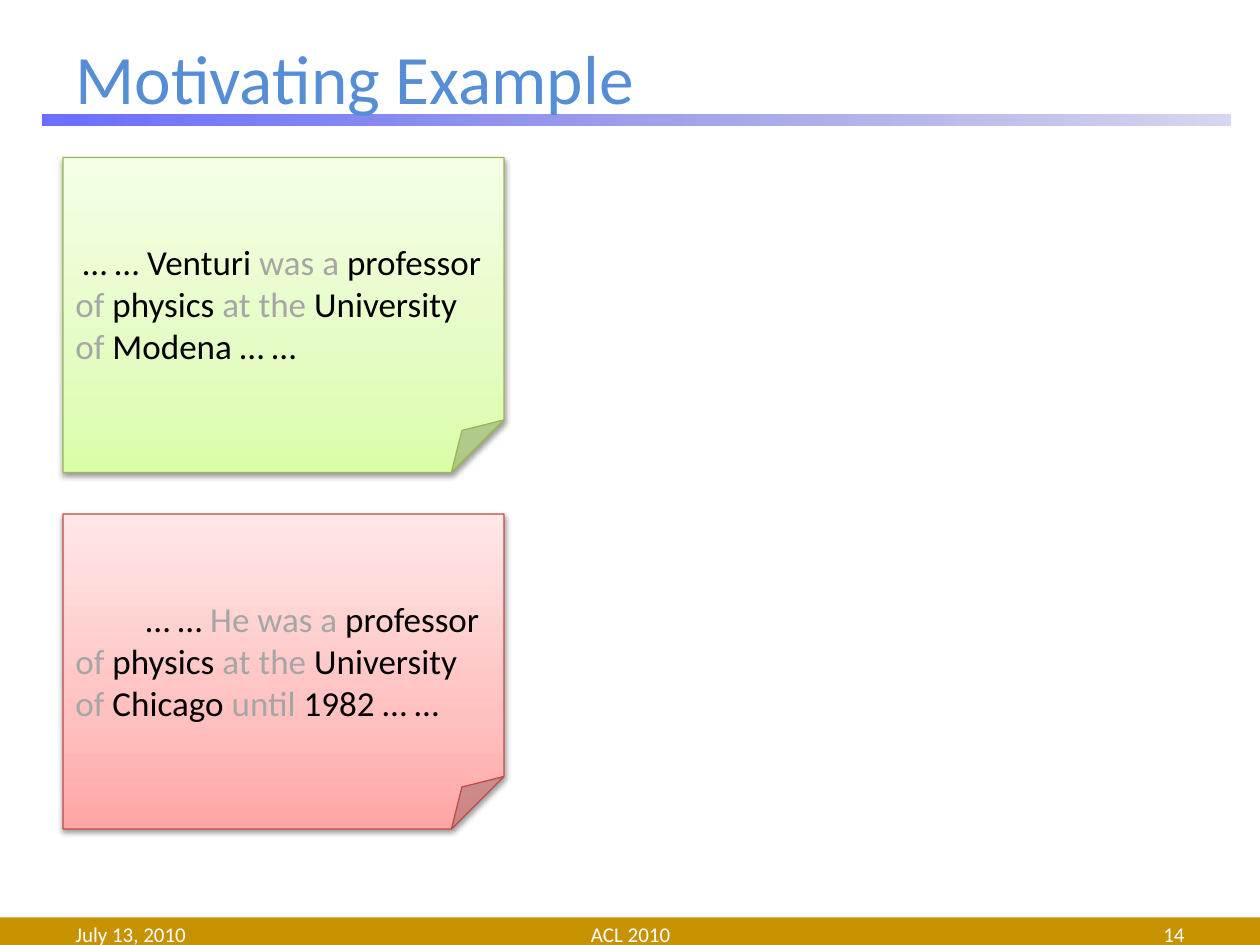
import pptx
import pptx.util
import pptx.dml.color
import pptx.enum.shapes
import pptx.enum.text
import pptx.oxml
from pptx.oxml.ns import nsdecls, qn

Inches, Pt = pptx.util.Inches, pptx.util.Pt
RGBColor = pptx.dml.color.RGBColor
SHAPE = pptx.enum.shapes.MSO_SHAPE
ANCHOR = pptx.enum.text.MSO_ANCHOR
ALIGN = pptx.enum.text.PP_ALIGN

FONT = "Calibri"
BLACK = RGBColor(0x00, 0x00, 0x00)
WHITE = RGBColor(0xFF, 0xFF, 0xFF)
GREY = RGBColor(0xA6, 0xA6, 0xA6)
TITLE_BLUE = RGBColor(0x55, 0x8E, 0xD5)
GOLD = RGBColor(0xC6, 0x92, 0x00)

# Gradient stops: position %, colour, opacity %
RULE_STOPS = [(0, RGBColor(0x46, 0x4A, 0xFC), 80), (100, RGBColor(0x32, 0x35, 0xB4), 20)]
GREEN_STOPS = [(0, RGBColor(0xDA, 0xFD, 0xA7), 100), (35, RGBColor(0xE4, 0xFC, 0xC2), 100),
               (100, RGBColor(0xF5, 0xFF, 0xE7), 100)]
RED_STOPS = [(0, RGBColor(0xFF, 0xA6, 0xA5), 100), (35, RGBColor(0xFF, 0xC0, 0xBF), 100),
             (100, RGBColor(0xFF, 0xE7, 0xE7), 100)]

TITLE = "Motivating Example"
FOOTERS = [  # text, left, width, alignment
    ("July 13, 2010", 0.5, 2.33, ALIGN.LEFT),
    ("ACL 2010", 3.42, 3.17, ALIGN.CENTER),
    ("14", 7.17, 2.33, ALIGN.RIGHT),
]
# Runs alternate between content words (black) and function words (grey)
NOTES = [
    {"stops": GREEN_STOPS, "line": RGBColor(0x98, 0xB9, 0x55), "indent": 0.06,
     "runs": ["… … Venturi ", "was a", " professor ", "of", " physics ", "at the",
              " University ", "of", " Modena … …"]},
    {"stops": RED_STOPS, "line": RGBColor(0xBF, 0x4C, 0x48), "indent": 0.56,
     "runs": ["… … ", "He was a", " professor ", "of", " physics ", "at the",
              " University ", "of", " Chicago ", "until", " 1982 … …"]},
]
NOTE_LEFT, NOTE_TOP, NOTE_WIDTH, NOTE_HEIGHT, NOTE_GAP = 0.5, 1.25, 3.5, 2.5, 0.33


def add_shape(slide, kind, left, top, width, height):
    shape = slide.shapes.add_shape(kind, Inches(left), Inches(top), Inches(width), Inches(height))
    shape.shadow.inherit = False
    shape.line.fill.background()
    return shape


def fill_gradient(shape, stops, angle):
    """Fill with any number of stops; the angle runs counter-clockwise."""
    shape.fill.gradient()
    shape.fill.gradient_angle = angle
    stop_list = shape._element.spPr.find(".//" + qn("a:gsLst"))
    for stop in list(stop_list):
        stop_list.remove(stop)
    for position, color, opacity in stops:
        stop_list.append(pptx.oxml.parse_xml(
            f'<a:gs {nsdecls("a")} pos="{position * 1000}"><a:srgbClr val="{color}">'
            f'<a:alpha val="{opacity * 1000}"/></a:srgbClr></a:gs>'))


def add_drop_shadow(shape):
    shape._element.spPr.find(qn("a:effectLst")).append(pptx.oxml.parse_xml(
        f'<a:outerShdw {nsdecls("a")} blurRad="{Pt(3.1)}" dist="{Pt(1.6)}" dir="5400000" '
        'rotWithShape="0"><a:srgbClr val="000000"><a:alpha val="38000"/></a:srgbClr></a:outerShdw>'))


def format_font(font, size, color):
    font.name = FONT
    font.size = Pt(size)
    font.color.rgb = color


def add_label(slide, text, left, top, width, height, size, color, alignment=ALIGN.LEFT):
    box = slide.shapes.add_textbox(Inches(left), Inches(top), Inches(width), Inches(height))
    frame = box.text_frame
    frame.word_wrap = True
    frame.vertical_anchor = ANCHOR.MIDDLE
    frame.margin_top = frame.margin_bottom = 0
    frame.text = text
    paragraph = frame.paragraphs[0]
    paragraph.alignment = alignment
    format_font(paragraph.runs[0].font, size, color)


def add_note(slide, note, top):
    shape = add_shape(slide, SHAPE.FOLDED_CORNER, NOTE_LEFT, top, NOTE_WIDTH, NOTE_HEIGHT)
    fill_gradient(shape, note["stops"], 90)
    shape.line.color.rgb = note["line"]
    shape.line.width = Pt(0.75)
    add_drop_shadow(shape)
    frame = shape.text_frame
    frame.word_wrap = True
    frame.vertical_anchor = ANCHOR.TOP
    frame.margin_top = Inches(0.66)
    paragraph = frame.paragraphs[0]
    paragraph.alignment = ALIGN.LEFT
    paragraph._p.get_or_add_pPr().set("indent", str(Inches(note["indent"])))
    for index, text in enumerate(note["runs"]):
        run = paragraph.add_run()
        run.text = text
        format_font(run.font, 20, GREY if index % 2 else BLACK)


def main():
    presentation = pptx.Presentation()
    presentation.slide_width, presentation.slide_height = Inches(10), Inches(7.5)
    slide = presentation.slides.add_slide(presentation.slide_layouts[6])

    footer_band = add_shape(slide, SHAPE.RECTANGLE, 0, 7.28, 10, 0.22)
    footer_band.fill.solid()
    footer_band.fill.fore_color.rgb = GOLD
    title_rule = add_shape(slide, SHAPE.RECTANGLE, 0.34, 0.91, 9.43, 0.09)
    fill_gradient(title_rule, RULE_STOPS, 0)

    add_label(slide, TITLE, 0.5, 0.3, 9, 0.62, 39.6, TITLE_BLUE)
    for text, left, width, alignment in FOOTERS:
        add_label(slide, text, left, 7.33, width, 0.17, 12, WHITE, alignment)
    for index, note in enumerate(NOTES):
        add_note(slide, note, NOTE_TOP + index * (NOTE_HEIGHT + NOTE_GAP))

    presentation.save("out.pptx")


if __name__ == "__main__":
    main()
